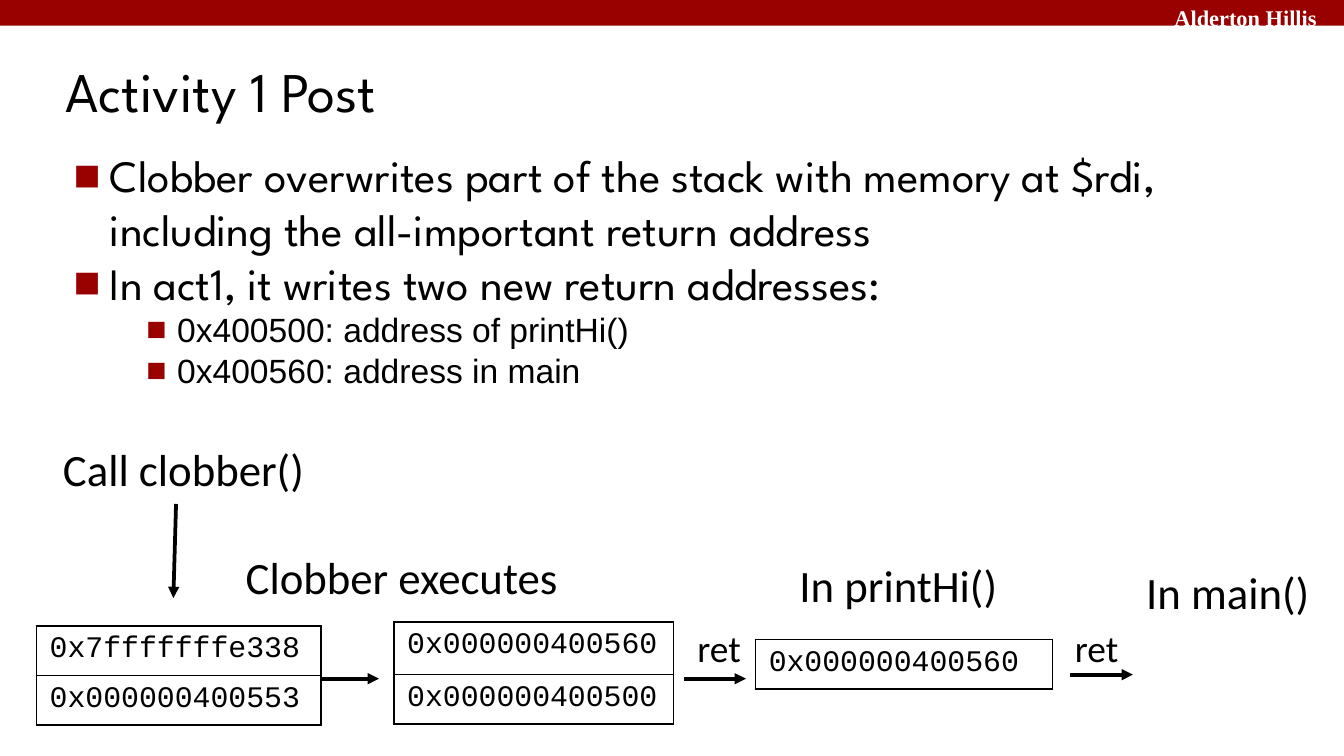
from lxml import etree
from pptx import Presentation
from pptx import util as u
from pptx.dml.color import RGBColor
from pptx.enum import shapes, text
from pptx.oxml import ns

# Content: boxes are left, top, width, height in inches
WIDTH = 10
HEIGHT = WIDTH * 9 / 16
RED, BLACK, WHITE = "990000", "000000", "FFFFFF"

BANNER = ("Alderton Hillis", (8.64, -0.02, 1.43, 0.23))
TITLE = ("Activity 1 Post", (0.39, 0.36, 8.3, 0.62))
BODY_BOX = (0.34, 1, 9.07, 1.92)
BULLETS = [
    (0, "Clobber overwrites part of the stack with memory at $rdi, "
        "including the all-important return address"),
    (0, "In act1, it writes two new return addresses:"),
    (1, "0x400500: address of printHi()"),
    (1, "0x400560: address in main"),
]
LEVELS = [
    {"left": 0.38, "hang": 0.27, "font": {"name": "League Spartan", "size": 24}},
    {"left": 0.88, "hang": 0.23, "font": {"name": "Arial", "size": 18}},
]
STACKS = [  # left, top, width, height, least row heights, values
    (0.27, 4.66, 2.12, 0.73, (0.3, 0.3), ("0x7fffffffe338", "0x000000400553")),
    (2.93, 4.63, 2.08, 0.76, (0.39, 0.25), ("0x000000400560", "0x000000400500")),
    (5.62, 4.76, 2.21, 0.37, (0.3,), ("0x000000400560",)),
]
LABELS = [  # text, left, top, width, height, size
    ("Call clobber()", 0.37, 3.24, 2.01, 0.5, 24),
    ("Clobber executes", 1.73, 4.04, 2.56, 0.5, 24),
    ("In printHi()", 5.85, 4.1, 1.69, 0.5, 24),
    ("In main()", 8.43, 4.15, 1.43, 0.5, 24),
    ("ret", 5.09, 4.6, 0.53, 0.44, 20),
    ("ret", 7.9, 4.6, 0.53, 0.44, 20),
]
ARROWS = [  # from x, from y, to x, to y
    (1.31, 3.75, 1.29, 4.45),
    (2.39, 5.05, 2.82, 5.05),
    (5.09, 5.05, 5.55, 5.05),
    (7.96, 5.02, 8.43, 5.02),
]


def color(value):
    return RGBColor.from_string(value)


def inches(values):
    return [u.Inches(value) for value in values]


def add_xml(parent, tag, **attributes):
    return etree.SubElement(parent, ns.qn(tag), attributes)


def write(paragraph, words, name, size, ink=BLACK, bold=False):
    run = paragraph.add_run()
    run.text = words
    for key, value in {"name": name, "size": u.Pt(size), "bold": bold}.items():
        setattr(run.font, key, value)
    run.font.color.rgb = color(ink)


def add_box(slide, box, inset=0.05, **settings):
    frame = slide.shapes.add_textbox(*inches(box)).text_frame
    margins = {"margin_top": u.Inches(inset), "margin_bottom": u.Inches(inset)}
    for key, value in {"word_wrap": True, **margins, **settings}.items():
        setattr(frame, key, value)
    return frame


def add_bullet(paragraph, left, hang):
    properties = paragraph._p.get_or_add_pPr()
    properties.set("marL", str(u.Inches(left)))
    properties.set("indent", str(-u.Inches(hang)))
    add_xml(add_xml(properties, "a:buClr"), "a:srgbClr", val=RED)
    add_xml(properties, "a:buFont", typeface="Arial")
    add_xml(properties, "a:buChar", char="■")


def add_stack(slide, left, top, width, height, row_heights, values):
    box = inches((left, top, width, height))
    table = slide.shapes.add_table(len(values), 1, *box).table
    table.first_row = table.horz_banding = False
    for row, row_height, value in zip(table.rows, row_heights, values):
        row.height = u.Inches(row_height)
        cell = row.cells[0]
        write(cell.text_frame.paragraphs[0], value, "Courier New", 16)
        properties = cell._tc.get_or_add_tcPr()
        for side in ("a:lnL", "a:lnR", "a:lnT", "a:lnB"):
            border = add_xml(properties, side, w=str(u.Pt(1)))
            add_xml(add_xml(border, "a:solidFill"), "a:srgbClr", val=BLACK)
        cell.fill.background()


def add_arrow(slide, points):
    arrow = slide.shapes.add_connector(shapes.MSO_CONNECTOR.STRAIGHT, *inches(points))
    arrow.line.color.rgb = color(BLACK)
    arrow.line.width = u.Pt(2)
    add_xml(arrow.line._get_or_add_ln(), "a:tailEnd", type="triangle")
    add_xml(arrow._element.spPr, "a:effectLst")


def main():
    presentation = Presentation()
    presentation.slide_width, presentation.slide_height = inches((WIDTH, HEIGHT))
    slide = presentation.slides.add_slide(presentation.slide_layouts[6])

    # Banner
    banner = slide.shapes.add_shape(shapes.MSO_SHAPE.RECTANGLE, *inches((0, 0, WIDTH, 0.19)))
    banner.shadow.inherit = False
    banner.fill.solid()
    banner.fill.fore_color.rgb = color(RED)
    banner.line.fill.background()
    words, box = BANNER
    frame = add_box(slide, box)
    write(frame.paragraphs[0], words, "Times New Roman", 12, WHITE, True)

    # Title
    words, box = TITLE
    frame = add_box(slide, box, inset=0.1, vertical_anchor=text.MSO_ANCHOR.MIDDLE)
    write(frame.paragraphs[0], words, "League Spartan", 30)

    # Bullets
    frame = add_box(slide, BODY_BOX, inset=0.1)
    for index, (level, words) in enumerate(BULLETS):
        paragraph = frame.add_paragraph() if index else frame.paragraphs[0]
        paragraph.level = level
        style = LEVELS[level]
        add_bullet(paragraph, style["left"], style["hang"])
        write(paragraph, words, **style["font"])

    # Stack diagram
    for stack in STACKS:
        add_stack(slide, *stack)
    for points in ARROWS:
        add_arrow(slide, points)
    for words, *box, size in LABELS:
        frame = add_box(slide, box, word_wrap=False,
                        auto_size=text.MSO_AUTO_SIZE.SHAPE_TO_FIT_TEXT)
        write(frame.paragraphs[0], words, "Calibri", size)

    presentation.save("out.pptx")


if __name__ == "__main__":
    main()
